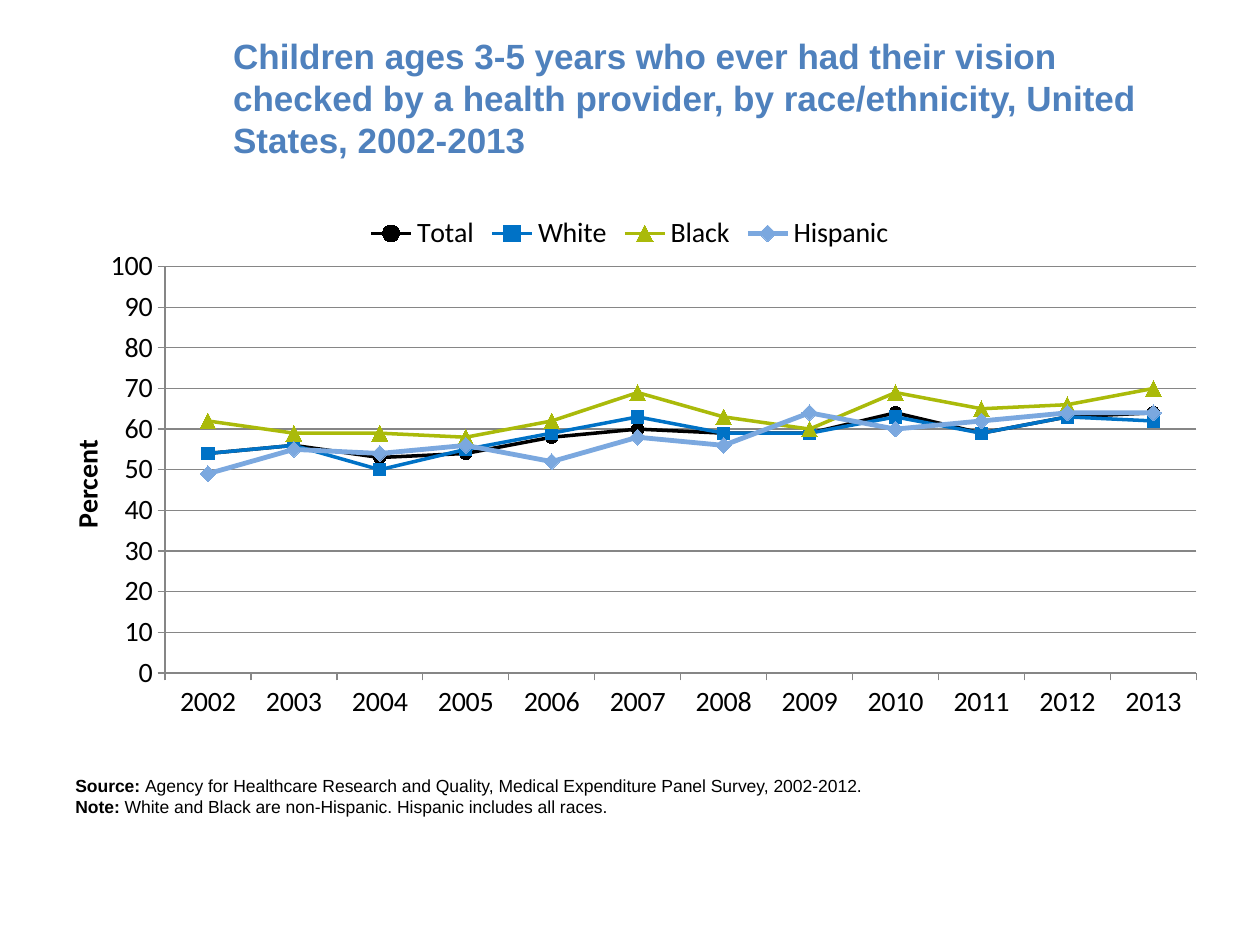
from lxml import etree
from pptx import Presentation
from pptx.chart.data import CategoryChartData
from pptx.dml.color import RGBColor
from pptx.enum.chart import XL_CHART_TYPE, XL_LEGEND_POSITION, XL_MARKER_STYLE, XL_TICK_MARK
from pptx.enum.text import MSO_ANCHOR, PP_ALIGN
from pptx.oxml.ns import qn
from pptx.util import Inches, Pt

LINE_MARKERS = XL_CHART_TYPE.LINE_MARKERS
LEGEND_TOP = XL_LEGEND_POSITION.TOP
TICK_OUT = XL_TICK_MARK.OUTSIDE
TICK_NONE = XL_TICK_MARK.NONE
CIRCLE, SQUARE = XL_MARKER_STYLE.CIRCLE, XL_MARKER_STYLE.SQUARE
TRIANGLE, DIAMOND = XL_MARKER_STYLE.TRIANGLE, XL_MARKER_STYLE.DIAMOND
MIDDLE = MSO_ANCHOR.MIDDLE
LEFT = PP_ALIGN.LEFT

COLORS = {
    "title": "4F81BD",
    "text": "000000",
    "grid": "868686",
    "Total": "000000",
    "White": "0072C6",
    "Black": "AABA0A",
    "Hispanic": "7BA8DF",
}
TITLE = ("Children ages 3-5 years who ever had their vision checked by a health "
         "provider, by race/ethnicity, United States, 2002-2013")
YEARS = [str(year) for year in range(2002, 2014)]
PERCENTS = {
    "Total": [54, 56, 53, 54, 58, 60, 59, 59, 64, 59, 63, 64],
    "White": [54, 56, 50, 55, 59, 63, 59, 59, 63, 59, 63, 62],
    "Black": [62, 59, 59, 58, 62, 69, 63, 60, 69, 65, 66, 70],
    "Hispanic": [49, 55, 54, 56, 52, 58, 56, 64, 60, 62, 64, 64],
}
STYLES = {
    "Total": (2, CIRCLE, 7),
    "White": (2, SQUARE, 7),
    "Black": (2, TRIANGLE, 9),
    "Hispanic": (2.75, DIAMOND, 9),
}
NOTES = [
    ("Source: ", "Agency for Healthcare Research and Quality, "
                 "Medical Expenditure Panel Survey, 2002-2012."),
    ("Note: ", "White and Black are non-Hispanic. Hispanic includes all races."),
]
PLOT_LAYOUT = {
    "layoutTarget": "inner", "xMode": "edge", "yMode": "edge",
    "x": 0.09, "y": 0.12, "w": 0.91, "h": 0.75,
}


def color(name):
    return RGBColor.from_string(COLORS[name])


def set_font(font, name, size, bold, color_name="text"):
    font.name = name
    font.size = Pt(size)
    font.bold = bold
    font.color.rgb = color(color_name)


def place_title(page, left, top, width, height):
    title = page.shapes.title
    title.left, title.top, title.width, title.height = left, top, width, height
    frame = title.text_frame
    frame.text = TITLE
    frame.word_wrap = True
    frame.vertical_anchor = MIDDLE
    para = frame.paragraphs[0]
    para.alignment = LEFT
    set_font(para.runs[0].font, "Arial", 20, True, "title")


def set_plot_layout(chart):
    plot_area = chart._chartSpace.chart.plotArea
    for layout in plot_area.findall(qn("c:layout")):
        plot_area.remove(layout)
    layout = etree.Element(qn("c:layout"))
    manual = etree.SubElement(layout, qn("c:manualLayout"))
    for tag, value in PLOT_LAYOUT.items():
        etree.SubElement(manual, qn(f"c:{tag}")).set("val", str(value))
    plot_area.insert(0, layout)


def style_axes(chart):
    for axis in (chart.category_axis, chart.value_axis):
        axis.major_tick_mark = TICK_OUT
        axis.minor_tick_mark = TICK_NONE
        axis.format.line.color.rgb = color("grid")
        set_font(axis.tick_labels.font, "Calibri", 16, False)
    percent = chart.value_axis
    percent.minimum_scale, percent.maximum_scale, percent.major_unit = 0, 100, 10
    percent.tick_labels.number_format = "0"
    percent.tick_labels.number_format_is_linked = False
    percent.major_gridlines.format.line.color.rgb = color("grid")
    frame = percent.axis_title.text_frame
    frame.text = "Percent"
    set_font(frame.paragraphs[0].runs[0].font, "Calibri", 16, True)


def style_series(series):
    width, marker_style, marker_size = STYLES[series.name]
    series.smooth = False
    series.format.line.width = Pt(width)
    series.format.line.color.rgb = color(series.name)
    marker = series.marker
    marker.style, marker.size = marker_style, marker_size
    marker.format.fill.solid()
    marker.format.fill.fore_color.rgb = color(series.name)
    marker.format.line.color.rgb = color(series.name)


def add_vision_chart(page, left, top, width, height):
    data = CategoryChartData(number_format="0")
    data.categories = YEARS
    for name, values in PERCENTS.items():
        data.add_series(name, values)
    chart = page.shapes.add_chart(LINE_MARKERS, left, top, width, height, data).chart
    set_font(chart.font, "Arial", 10, False)
    chart.has_title = False
    chart.has_legend = True
    chart.legend.position = LEGEND_TOP
    chart.legend.include_in_layout = False
    set_font(chart.legend.font, "Calibri", 16, False)
    chart.plots[0].vary_by_categories = False
    style_axes(chart)
    for series in chart.plots[0].series:
        style_series(series)
    set_plot_layout(chart)


def add_notes(page, left, top, width, height):
    frame = page.shapes.add_textbox(left, top, width, height).text_frame
    frame.word_wrap = True
    for index, (label, body) in enumerate(NOTES):
        para = frame.add_paragraph() if index else frame.paragraphs[0]
        for text, bold in ((label, True), (body, False)):
            span = para.add_run()
            span.text = text
            set_font(span.font, "Arial", 10, bold)


def main():
    deck = Presentation()
    deck.slide_width, deck.slide_height = Inches(10), Inches(7.5)
    page = deck.slides.add_slide(deck.slide_layouts[5])
    place_title(page, Inches(1.75), Inches(0.3), Inches(7.75), Inches(0.95))
    add_vision_chart(page, Inches(0.5), Inches(1.6), Inches(9), Inches(4.3))
    add_notes(page, Inches(0.5), Inches(6.1), Inches(9), Inches(0.44))
    deck.save("out.pptx")


if __name__ == "__main__":
    main()
